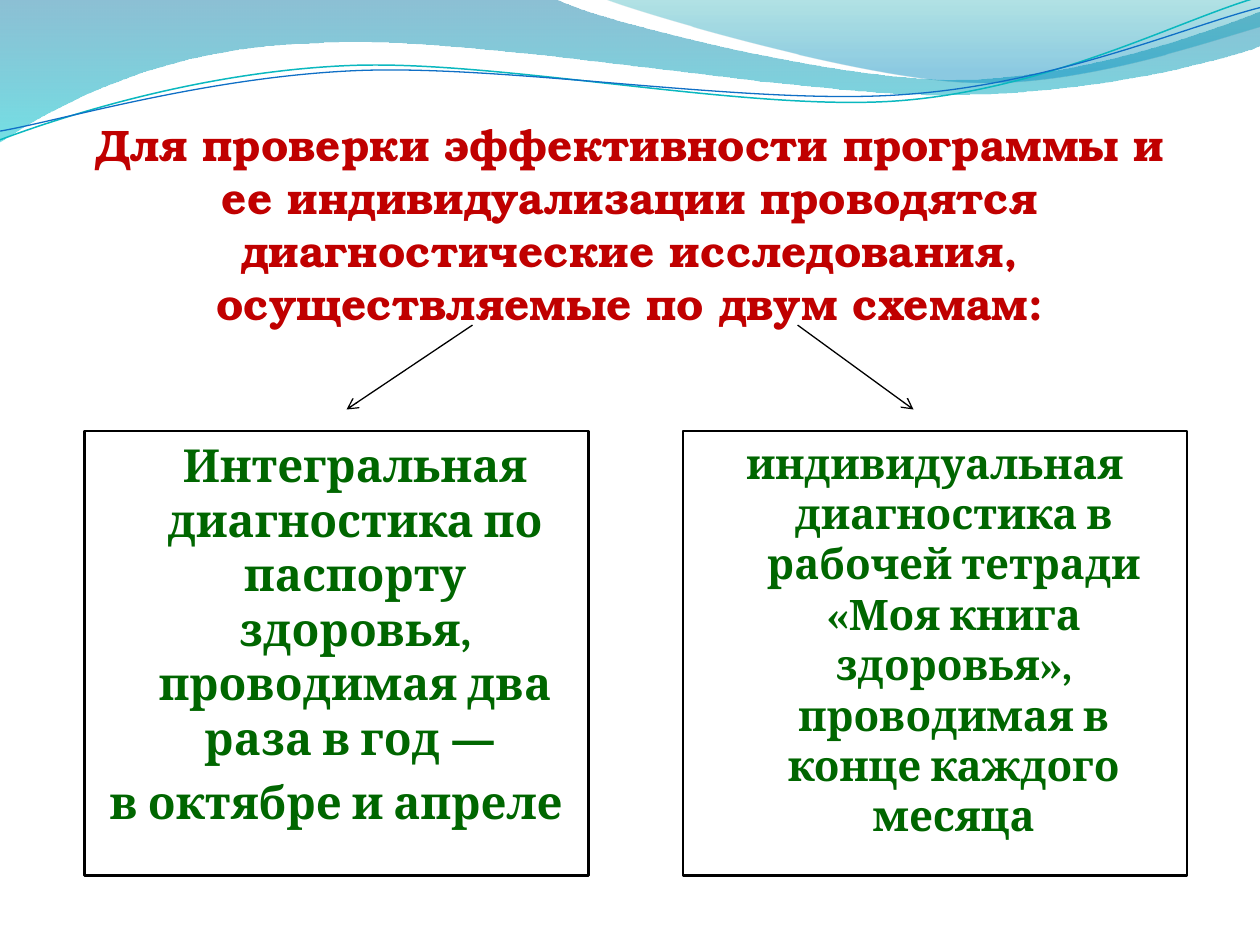
import math

import pptx
import pptx.util
import pptx.dml.color
import pptx.enum.shapes
import pptx.enum.text
import pptx.oxml
import pptx.oxml.ns

PX = 9144  # 100 px to the inch
A = pptx.oxml.ns.nsdecls("a")


def emu(px):
    return pptx.util.Emu(round(px * PX))


def color(hex_code):
    return pptx.dml.color.RGBColor.from_string(hex_code)


def add_outline(s, start, segments, close):
    """Draw segments of one point (line) or three points (cubic curve)."""
    builder = s.shapes.build_freeform(emu(start[0]), emu(start[1]), scale=1.0)
    points = [(emu(x), emu(y)) for segment in segments for x, y in segment]
    builder.add_line_segments(points, close=close)
    sp = builder.convert_to_shape()
    sp.shadow.inherit = False
    lines = iter(list(sp._element.spPr.iter(pptx.oxml.ns.qn("a:lnTo"))))
    for segment in segments:
        steps = [next(lines) for _ in segment]
        if len(segment) == 3:
            cubic = pptx.oxml.parse_xml(f"<a:cubicBezTo {A}/>")
            steps[0].addprevious(cubic)
            for step in steps:
                cubic.append(step[0])
                step.getparent().remove(step)
    return sp


def add_wave(s, start, segments, stops):
    sp = add_outline(s, start, segments, True)
    sp.line.fill.background()
    sp.fill.gradient()
    sp.fill.gradient_angle = 270
    for stop, (position, hex_code, _) in zip(sp.fill.gradient_stops, stops):
        stop.position = position
        stop.color.rgb = color(hex_code)
    for clr, (_, _, alpha) in zip(sp._element.spPr.iter(pptx.oxml.ns.qn("a:srgbClr")), stops):
        clr.append(pptx.oxml.parse_xml(f'<a:alpha {A} val="{alpha * 1000}"/>'))


def add_strand(s, points, center, hex_code, width, tilt=2.7):
    # Level the curve about its center, then tilt the shape back
    cos, sin = math.cos(math.radians(tilt)), math.sin(math.radians(tilt))
    cx, cy = center
    level = [(cx + (x - cx) * cos - (y - cy) * sin, cy + (x - cx) * sin + (y - cy) * cos)
             for x, y in points]
    sp = add_outline(s, level[0], [level[i:i + 3] for i in range(1, len(level), 3)], False)
    sp.rotation = 360 - tilt
    sp.fill.background()
    sp.line.color.rgb = color(hex_code)
    sp.line.width = pptx.util.Pt(width)


def add_header(s):
    # Translucent waves
    add_wave(s, (0, 0), [
        [(440, -1)],
        [(476, 17), (664, 63), (758, 63)], [(853, 63), (958, 26), (1000, 9)],
        [(1001, 36)],
        [(983, 44), (870, 76), (746, 75)], [(622, 75), (382, 28), (257, 34)],
        [(129, 36), (46, 83), (-1, 113)],
    ], [(0, "0074A1", 45), (1, "00C6CF", 55)])
    add_wave(s, (479, -1), [
        [(509, 11), (682, 62), (769, 65)], [(856, 69), (961, 32), (1000, 21)],
        [(1000, 0)],
    ], [(0, "00A1A9", 30), (0.8, "008BBF", 45)])
    # Thin strands
    add_strand(s, [(0, 111), (48, 93), (158, 57), (277, 52), (395, 47), (593, 89), (713, 80),
                   (833, 71), (938, 15), (998, -2)], (499, 57), "0AB8BF", 0.85)
    add_strand(s, [(0, 104), (47, 96), (164, 61), (283, 56), (403, 51), (597, 84), (717, 75),
                   (836, 67), (941, 21), (1000, 6)], (499, 59), "0F6FC6", 0.75)


def add_text(p, text, size, font, hex_code):
    p.alignment = pptx.enum.text.PP_ALIGN.CENTER
    r = p.add_run()
    r.text = text
    r.font.size = pptx.util.Pt(size)
    r.font.name = font
    r.font.bold = True
    r.font.color.rgb = color(hex_code)


def add_title(s, x, y, w, h, text):
    tf = s.shapes.add_textbox(emu(x), emu(y), emu(w), emu(h)).text_frame
    tf.word_wrap = True
    tf.vertical_anchor = pptx.enum.text.MSO_ANCHOR.BOTTOM
    tf.margin_left = tf.margin_right = 0
    tf.margin_bottom = emu(81)  # room for the arrows
    add_text(tf.paragraphs[0], text, size=25.2, font="TeX Gyre Bonum", hex_code="C00000")


def add_scheme(s, x, y, w, h, paragraphs, size):
    sp = s.shapes.add_shape(pptx.enum.shapes.MSO_SHAPE.RECTANGLE, emu(x), emu(y), emu(w), emu(h))
    sp.shadow.inherit = False
    sp.fill.background()
    sp.line.color.rgb = color("000000")
    sp.line.width = pptx.util.Pt(1.5)
    tf = sp.text_frame
    tf.word_wrap = True
    tf.vertical_anchor = pptx.enum.text.MSO_ANCHOR.TOP
    for i, (text, indent) in enumerate(paragraphs):
        p = tf.add_paragraph() if i else tf.paragraphs[0]
        p.space_before = pptx.util.Pt(size / 5)
        pPr = p._p.get_or_add_pPr()
        pPr.set("marL", str(emu(30)))
        pPr.set("indent", str(emu(indent)))
        add_text(p, text, size=size, font="Cambria", hex_code="006600")


def add_arrow(s, x1, y1, x2, y2):
    cxn = s.shapes.add_connector(pptx.enum.shapes.MSO_CONNECTOR.STRAIGHT,
                                 emu(x1), emu(y1), emu(x2), emu(y2))
    cxn.line.color.rgb = color("000000")
    cxn.line.width = pptx.util.Pt(0.75)
    ln = cxn._element.spPr.find(pptx.oxml.ns.qn("a:ln"))
    ln.append(pptx.oxml.parse_xml(f'<a:tailEnd {A} type="arrow"/>'))
    cxn._element.spPr.append(pptx.oxml.parse_xml(f"<a:effectLst {A}/>"))


def main():
    prs = pptx.Presentation()
    prs.slide_width, prs.slide_height = emu(1000), emu(750)
    s = prs.slides.add_slide(prs.slide_layouts[6])

    add_header(s)
    add_title(s, 50, 117, 900, 225,
              "Для проверки эффективности программы и ее индивидуализации проводятся "
              "диагностические исследования, осуществляемые по двум схемам:")

    # The two schemes
    add_scheme(s, 67, 342, 400, 353, [
        ("Интегральная диагностика по паспорту здоровья, проводимая два раза в год — ", 0),
        ("в октябре и апреле", -30)], size=26)
    add_scheme(s, 542, 342, 400, 353, [
        ("индивидуальная диагностика в рабочей тетради «Моя книга здоровья», "
         "проводимая в конце каждого месяца", -30)], size=24)

    # Arrows from the title to the schemes
    add_arrow(s, 375, 258, 275, 325)
    add_arrow(s, 633, 258, 725, 325)

    prs.save("out.pptx")


if __name__ == "__main__":
    main()
